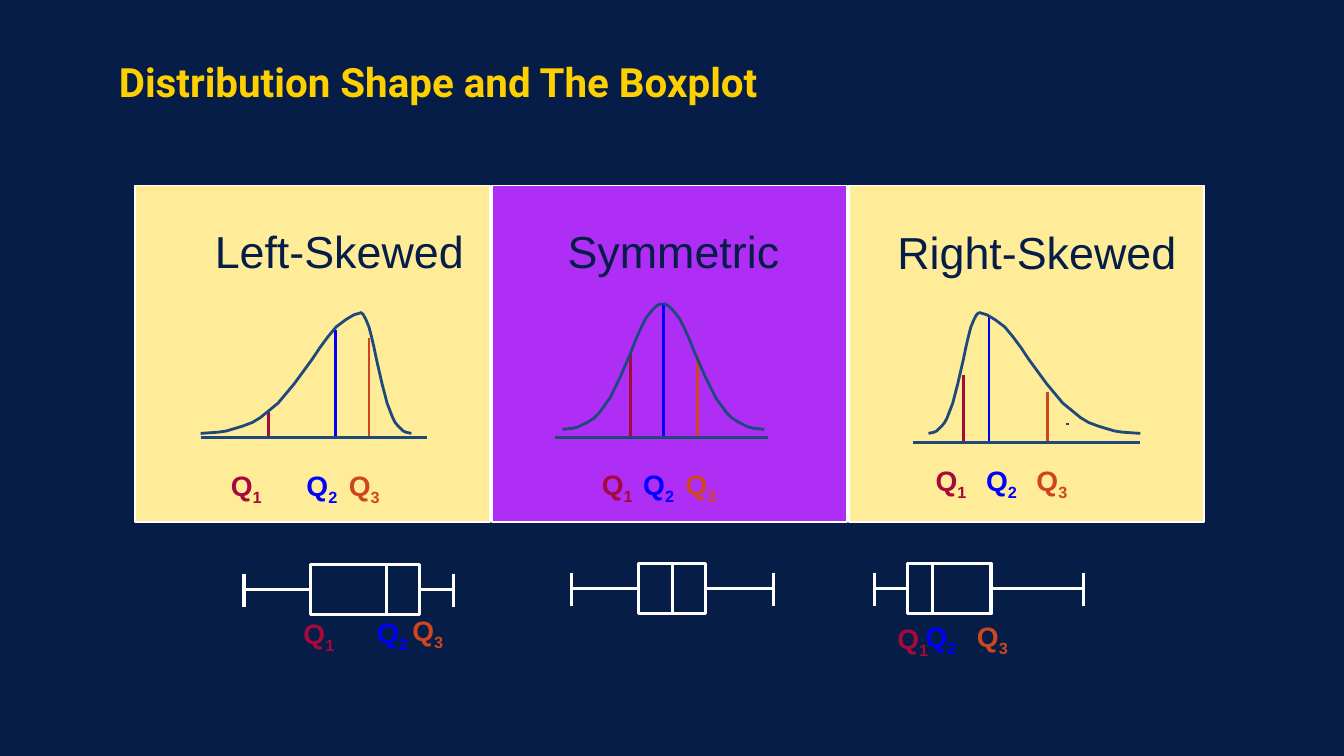
"""Build a slide that sets three distribution shapes beside their boxplots."""
from lxml.etree import SubElement
from pptx import Presentation
from pptx.dml.color import RGBColor
from pptx.enum.shapes import MSO_CONNECTOR, MSO_SHAPE
from pptx.enum.text import MSO_ANCHOR
from pptx.oxml.ns import qn
from pptx.util import Inches, Pt

NAVY = RGBColor(0x06, 0x1D, 0x48)
GOLD = RGBColor(0xFF, 0xD0, 0x00)
CREAM = RGBColor(0xFF, 0xEC, 0x99)
PURPLE = RGBColor(0xAE, 0x2E, 0xF6)
WHITE = RGBColor(0xFF, 0xFF, 0xFF)
STEEL = RGBColor(0x1F, 0x49, 0x7D)
CRIMSON = RGBColor(0xA6, 0x09, 0x3C)
BLUE = RGBColor(0x00, 0x00, 0xFF)
ORANGE = RGBColor(0xCF, 0x45, 0x20)
QUARTILE_COLORS = (CRIMSON, BLUE, ORANGE)

CURVE_RUN = (0, .11, .16, .21, .26, .32, .37, .48, .58, .69, .74, .79, .84, .9, .95, 1)
CURVE_RISE = (0, .01, .02, .04, .06, .09, .13, .25, .41, .61, .71, .8, .88, .94, .98, 1)

deck = Presentation()
deck.slide_width, deck.slide_height = Inches(13.33), Inches(7.5)
page = deck.slides.add_slide(deck.slide_layouts[6])
page.background.fill.solid()
page.background.fill.fore_color.rgb = NAVY


def add_text(text, left, top, width, height, size, color, font="Arial",
             bold=False, subscript="", wrap=True, inset=0.05, spacing=1.0):
    """Add a text box, with an optional subscript after the text."""
    box = page.shapes.add_textbox(Inches(left), Inches(top), Inches(width), Inches(height))
    frame = box.text_frame
    frame.word_wrap = wrap
    frame.margin_left = frame.margin_right = Inches(inset)
    frame.margin_top = frame.margin_bottom = Inches(0.05)
    frame.vertical_anchor = MSO_ANCHOR.MIDDLE if spacing < 1 else MSO_ANCHOR.TOP
    para = frame.paragraphs[0]
    para.line_spacing = spacing
    for part in filter(None, (text, subscript)):
        span = para.add_run()
        span.text = part
        span.font.name, span.font.size, span.font.bold = font, Pt(size), bold
        span.font.color.rgb = color
    if subscript:
        span.font._element.set("baseline", "-25000")


def add_line(x1, y1, x2, y2, color, weight):
    """Add a straight line without a shadow."""
    line = page.shapes.add_connector(
        MSO_CONNECTOR.STRAIGHT, Inches(x1), Inches(y1), Inches(x2), Inches(y2))
    line.line.color.rgb, line.line.width = color, Pt(weight)
    SubElement(line._element.spPr, qn("a:effectLst"))


distributions = [
    dict(name="Left-Skewed", name_at=(2.08, 2.17, 2.59), panel=CREAM,
         halves=((1.99, 3.59), (4.08, 3.58)), foot=4.3, peak=3.1,
         axis=(1.99, 4.24, 4.34), quartiles=((2.66, 4.09), (3.33, 3.27), (3.66, 3.35)),
         labels=((2.24, 4.6), (2.99, 4.6), (3.41, 4.6)),
         boxplot=(2.42, 3.08, 3.83, 4.16, 4.5), middle=5.85,
         box_labels=((2.96, 6.07), (3.69, 6.06), (4.04, 6.04))),
    dict(name="Symmetric", name_at=(5.58, 2.17, 2.22), panel=PURPLE,
         halves=((5.58, 6.56), (7.58, 6.58)), foot=4.26, peak=3.01,
         axis=(5.5, 7.62, 4.34), quartiles=((6.25, 3.51), (6.58, 3.01), (6.92, 3.51)),
         labels=((5.92, 4.59), (6.33, 4.59), (6.75, 4.59)),
         boxplot=(5.67, 6.33, 6.67, 7, 7.67), middle=5.84, box_labels=()),
    dict(name="Right-Skewed", name_at=(8.85, 2.18, 2.89), panel=CREAM,
         halves=((9.21, 9.71), (11.31, 9.71)), foot=4.3, peak=3.1,
         axis=(9.06, 11.31, 4.39), quartiles=((9.56, 3.72), (9.81, 3.13), (10.39, 3.89)),
         labels=((9.23, 4.55), (9.73, 4.55), (10.23, 4.55)),
         boxplot=(8.67, 9, 9.25, 9.83, 10.75), middle=5.84,
         box_labels=((8.85, 6.12), (9.13, 6.1), (9.64, 6.1))),
]

add_text("Distribution Shape and The Boxplot", 1.08, 0.63, 11.75, 0.44, 28.8, GOLD,
         font="Roboto", bold=True, inset=0.1, spacing=0.8)

for column, shape in enumerate(distributions):
    panel = page.shapes.add_shape(MSO_SHAPE.RECTANGLE, Inches(1.34 + 3.54 * column),
                                  Inches(1.84), Inches(3.52), Inches(3.34))
    panel.shadow.inherit = False
    panel.fill.solid()
    panel.fill.fore_color.rgb = shape["panel"]
    panel.line.color.rgb, panel.line.width = WHITE, Pt(1)
    add_text(shape["name"], *shape["name_at"], 0.64, 32, NAVY, wrap=False)

    start, end, axis = shape["axis"]
    for (x, top), color in zip(shape["quartiles"], QUARTILE_COLORS):
        add_line(x, top, x, axis, color, 2)
    for tail, crest in shape["halves"]:
        points = [(Inches(tail + (crest - tail) * run),
                   Inches(shape["foot"] + (shape["peak"] - shape["foot"]) * rise))
                  for run, rise in zip(CURVE_RUN, CURVE_RISE)]
        builder = page.shapes.build_freeform(*points[0])
        builder.add_line_segments(points[1:], close=False)
        curve = builder.convert_to_shape()
        curve.shadow.inherit = False
        curve.fill.background()
        curve.line.color.rgb, curve.line.width = STEEL, Pt(2)
    add_line(start, axis, end, axis, STEEL, 2.25)

    low, first, median, third, high = shape["boxplot"]
    middle = shape["middle"]
    box = page.shapes.add_shape(MSO_SHAPE.RECTANGLE, Inches(first), Inches(middle - 0.25),
                                Inches(third - first), Inches(0.5))
    box.shadow.inherit = False
    box.fill.background()
    box.line.color.rgb, box.line.width = WHITE, Pt(2.25)
    add_line(median, middle - 0.25, median, middle + 0.25, WHITE, 2.25)
    for whisker, edge in ((low, first), (high, third)):
        add_line(whisker, middle, edge, middle, WHITE, 2.25)
        add_line(whisker, middle - 0.16, whisker, middle + 0.17, WHITE, 2.25)

    for labels in (shape["labels"], shape["box_labels"]):
        for number, (place, color) in enumerate(zip(labels, QUARTILE_COLORS), 1):
            add_text("Q", *place, 0.67, 0.44, 20, color, bold=True, subscript=str(number))

add_line(10.59, 4.2, 10.59, 4.22, STEEL, 2)

deck.save("out.pptx")
